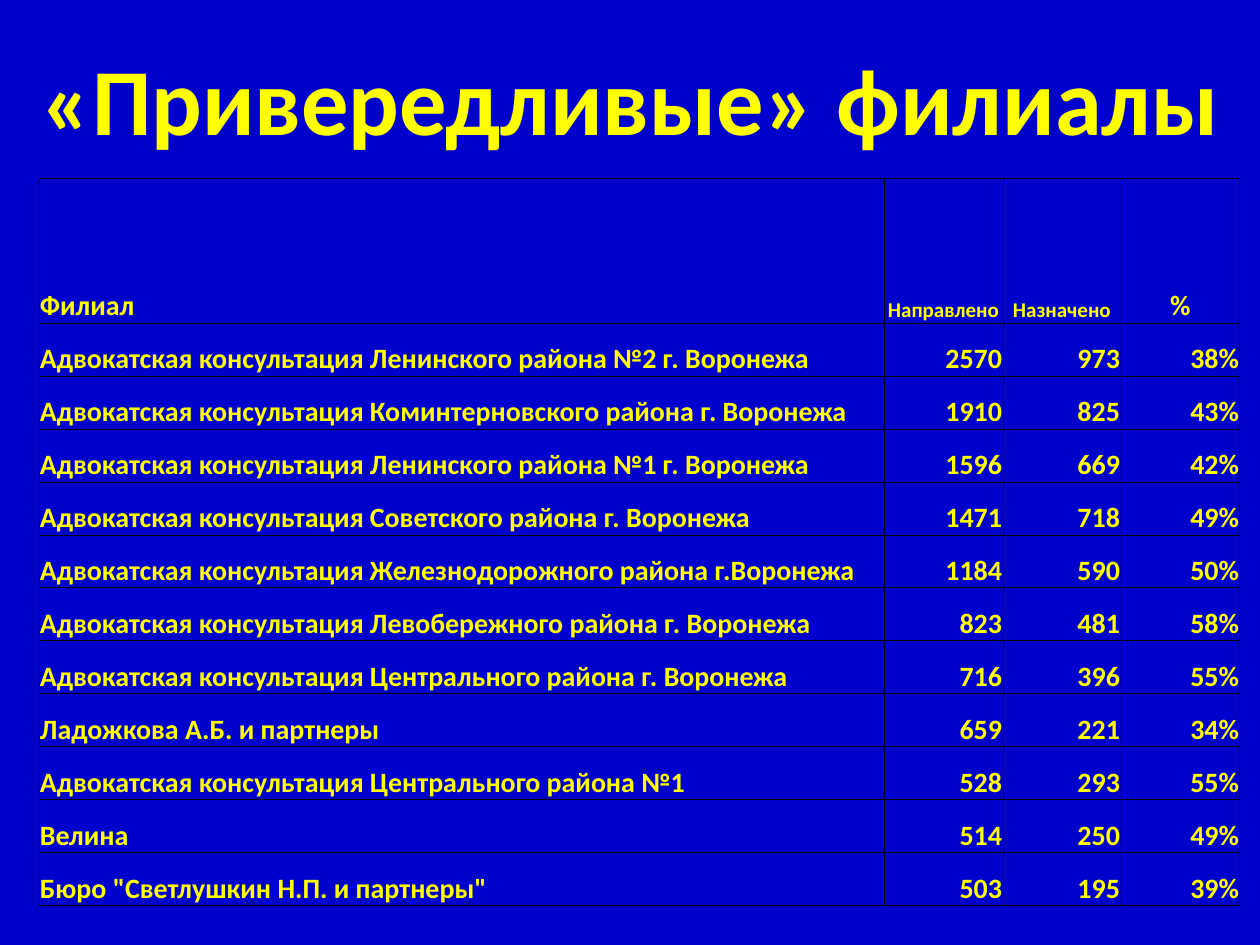
from lxml import etree
from pptx import Presentation
from pptx import util as u
from pptx.dml.color import RGBColor
from pptx.enum import text as t
from pptx.oxml.ns import qn

SCALE = 914400 / 126
BLUE, YELLOW, BLACK = "0000CC", "FFFF00", "000000"
LEFT, CENTER, RIGHT = t.PP_ALIGN.LEFT, t.PP_ALIGN.CENTER, t.PP_ALIGN.RIGHT

COLUMN_WIDTHS = [845, 119, 118, 119]
HEADER_HEIGHT, ROW_HEIGHT = 145, 53
HEADINGS = [("Филиал", 16, LEFT), ("Направлено", 12, CENTER),
            ("Назначено", 12, CENTER), ("%", 16, CENTER)]
OFFICE = "Адвокатская консультация "
BRANCHES = [
    (OFFICE + "Ленинского района №2 г. Воронежа", 2570, 973),
    (OFFICE + "Коминтерновского района г. Воронежа", 1910, 825),
    (OFFICE + "Ленинского района №1 г. Воронежа", 1596, 669),
    (OFFICE + "Советского района г. Воронежа", 1471, 718),
    (OFFICE + "Железнодорожного района г.Воронежа", 1184, 590),
    (OFFICE + "Левобережного района г. Воронежа", 823, 481),
    (OFFICE + "Центрального района г. Воронежа", 716, 396),
    ("Ладожкова А.Б. и партнеры", 659, 221),
    (OFFICE + "Центрального района №1", 528, 293),
    ("Велина", 514, 250),
    ('Бюро "Светлушкин Н.П. и партнеры"', 503, 195),
]


def px(length):
    return u.Emu(round(length * SCALE))


def rgb(value):
    return RGBColor.from_string(value)


def write(frame, content, size=16, align=LEFT, color=YELLOW, bold=True):
    paragraph = frame.paragraphs[0]
    paragraph.alignment = align
    run = paragraph.add_run()
    run.text = content
    run.font.name = "Calibri"
    run.font.size = u.Pt(size)
    run.font.bold = bold
    run.font.color.rgb = rgb(color)


def add_borders(cell, color=BLACK, width=0.5):
    properties = cell._tc.get_or_add_tcPr()
    for side in ("lnL", "lnR", "lnT", "lnB"):
        line = etree.SubElement(properties, qn("a:" + side), w=str(u.Pt(width)))
        fill = etree.SubElement(line, qn("a:solidFill"))
        etree.SubElement(fill, qn("a:srgbClr"), val=color)


def fill_cell(cell, content, size=16, align=LEFT):
    cell.margin_left = cell.margin_right = cell.margin_top = px(1)
    cell.margin_bottom = 0
    cell.vertical_anchor = t.MSO_ANCHOR.BOTTOM
    add_borders(cell)
    cell.fill.background()
    write(cell.text_frame, content, size=size, align=align)


def add_title(slide, content):
    title = slide.shapes.title
    title.left, title.top, title.width, title.height = map(px, (20, 39, 1221, 118))
    title.text_frame.vertical_anchor = t.MSO_ANCHOR.MIDDLE
    write(title.text_frame, content, size=54, align=CENTER)


def add_branch_table(slide):
    height = HEADER_HEIGHT + ROW_HEIGHT * len(BRANCHES)
    table = slide.shapes.add_table(
        len(BRANCHES) + 1, len(HEADINGS),
        px(39), px(178), px(sum(COLUMN_WIDTHS)), px(height)).table
    table.first_row = table.horz_banding = False
    for column, width in zip(table.columns, COLUMN_WIDTHS):
        column.width = px(width)
    for index, row in enumerate(table.rows):
        row.height = px(ROW_HEIGHT if index else HEADER_HEIGHT)

    for column, (heading, size, align) in enumerate(HEADINGS):
        fill_cell(table.cell(0, column), heading, size=size, align=align)
    for row, (branch, sent, appointed) in enumerate(BRANCHES, start=1):
        values = (branch, str(sent), str(appointed), f"{appointed / sent:.0%}")
        for column, value in enumerate(values):
            fill_cell(table.cell(row, column), value,
                      align=RIGHT if column else LEFT)


def main():
    deck = Presentation()
    deck.slide_width, deck.slide_height = px(1260), px(945)
    slide = deck.slides.add_slide(deck.slide_layouts[0])
    slide.background.fill.solid()
    slide.background.fill.fore_color.rgb = rgb(BLUE)
    subtitle = slide.placeholders[1].element
    subtitle.getparent().remove(subtitle)
    add_title(slide, "«Привередливые» филиалы")
    add_branch_table(slide)
    deck.save("out.pptx")


if __name__ == "__main__":
    main()
